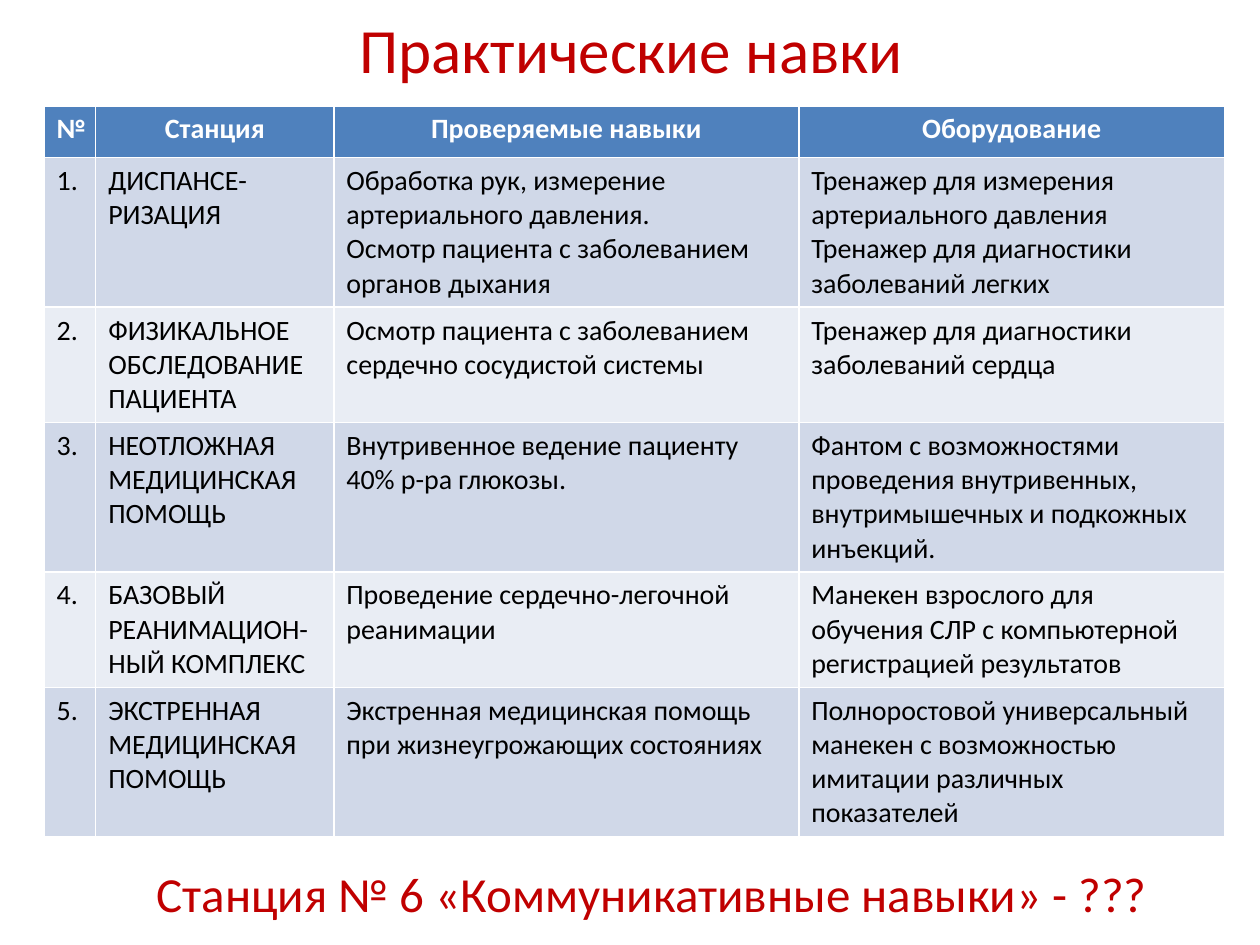
from dataclasses import dataclass

from pptx import Presentation
from pptx.dml.color import RGBColor
from pptx.enum.text import MSO_ANCHOR, PP_ALIGN
from pptx.util import Inches, Pt

CENTER, LEFT = PP_ALIGN.CENTER, PP_ALIGN.LEFT
MIDDLE = MSO_ANCHOR.MIDDLE
TITLE_ONLY = 5


@dataclass(frozen=True)
class Theme:
    font: str = "Calibri"
    accent: str = "C00000"
    header_fill: str = "4F81BD"
    header_text: str = "FFFFFF"
    body_text: str = "000000"
    bands: tuple = ("D0D8E8", "E9EDF4")
    title_size: int = 36
    note_size: int = 28
    table_size: int = 16


THEME = Theme()

COLUMN_WIDTHS = (0.41, 1.89, 3.69, 3.38)
ROW_HEIGHTS = (0.41, 1.18, 0.91, 1.18, 0.91, 1.18)
HEADINGS = ("№", "Станция", "Проверяемые навыки", "Оборудование")
STATIONS = (
    ("ДИСПАНСЕ-РИЗАЦИЯ",
     "Обработка рук, измерение артериального давления.\n"
     "Осмотр пациента с заболеванием органов дыхания",
     "Тренажер для измерения артериального давления\n"
     "Тренажер для диагностики заболеваний легких"),
    ("ФИЗИКАЛЬНОЕ ОБСЛЕДОВАНИЕ ПАЦИЕНТА",
     "Осмотр пациента с заболеванием сердечно сосудистой системы",
     "Тренажер для диагностики заболеваний сердца"),
    ("НЕОТЛОЖНАЯ МЕДИЦИНСКАЯ ПОМОЩЬ",
     "Внутривенное ведение пациенту 40% р-ра глюкозы.",
     "Фантом с возможностями\n"
     "проведения внутривенных, внутримышечных и подкожных инъекций."),
    ("БАЗОВЫЙ РЕАНИМАЦИОН-НЫЙ КОМПЛЕКС",
     "Проведение сердечно-легочной реанимации",
     "Манекен взрослого для обучения СЛР с компьютерной регистрацией результатов"),
    ("ЭКСТРЕННАЯ МЕДИЦИНСКАЯ ПОМОЩЬ",
     "Экстренная медицинская помощь при жизнеугрожающих состояниях",
     "Полноростовой универсальный манекен с возможностью имитации различных\n"
     "показателей"),
)


def write(frame, text, size, color, align=LEFT, bold=False):
    frame.text = text
    for paragraph in frame.paragraphs:
        paragraph.alignment = align
        for run in paragraph.runs:
            run.font.name = THEME.font
            run.font.size = Pt(size)
            run.font.bold = bold
            run.font.color.rgb = RGBColor.from_string(color)


def write_headline(frame, text, size):
    frame.word_wrap = True
    frame.vertical_anchor = MIDDLE
    write(frame, text, size, THEME.accent, CENTER)


def add_title(slide, text):
    title = slide.shapes.title
    title.left, title.top = Inches(0.51), Inches(0)
    title.width, title.height = Inches(9), Inches(0.77)
    write_headline(title.text_frame, text, THEME.title_size)


def add_note(slide, text):
    note = slide.shapes.add_textbox(Inches(0.67), Inches(6.7), Inches(9), Inches(0.77))
    write_headline(note.text_frame, text, THEME.note_size)


def fill_row(row, texts, fill, color, align=LEFT, bold=False):
    for cell, text in zip(row.cells, texts):
        cell.fill.solid()
        cell.fill.fore_color.rgb = RGBColor.from_string(fill)
        write(cell.text_frame, text, THEME.table_size, color, align, bold)


def add_stations(slide):
    table = slide.shapes.add_table(
        len(ROW_HEIGHTS), len(COLUMN_WIDTHS), Inches(0.35), Inches(0.84),
        Inches(sum(COLUMN_WIDTHS)), Inches(sum(ROW_HEIGHTS))).table
    for column, width in zip(table.columns, COLUMN_WIDTHS):
        column.width = Inches(width)
    for row, height in zip(table.rows, ROW_HEIGHTS):
        row.height = Inches(height)
    fill_row(table.rows[0], HEADINGS, THEME.header_fill, THEME.header_text, CENTER, True)
    for number, station in enumerate(STATIONS, start=1):
        band = THEME.bands[(number - 1) % len(THEME.bands)]
        fill_row(table.rows[number], (f"{number}.", *station), band, THEME.body_text)


def main():
    deck = Presentation()
    deck.slide_width, deck.slide_height = Inches(10), Inches(7.5)
    slide = deck.slides.add_slide(deck.slide_layouts[TITLE_ONLY])
    add_title(slide, "Практические навки")
    add_stations(slide)
    add_note(slide, "Станция № 6 «Коммуникативные навыки» - ???")
    deck.save("out.pptx")


if __name__ == "__main__":
    main()
